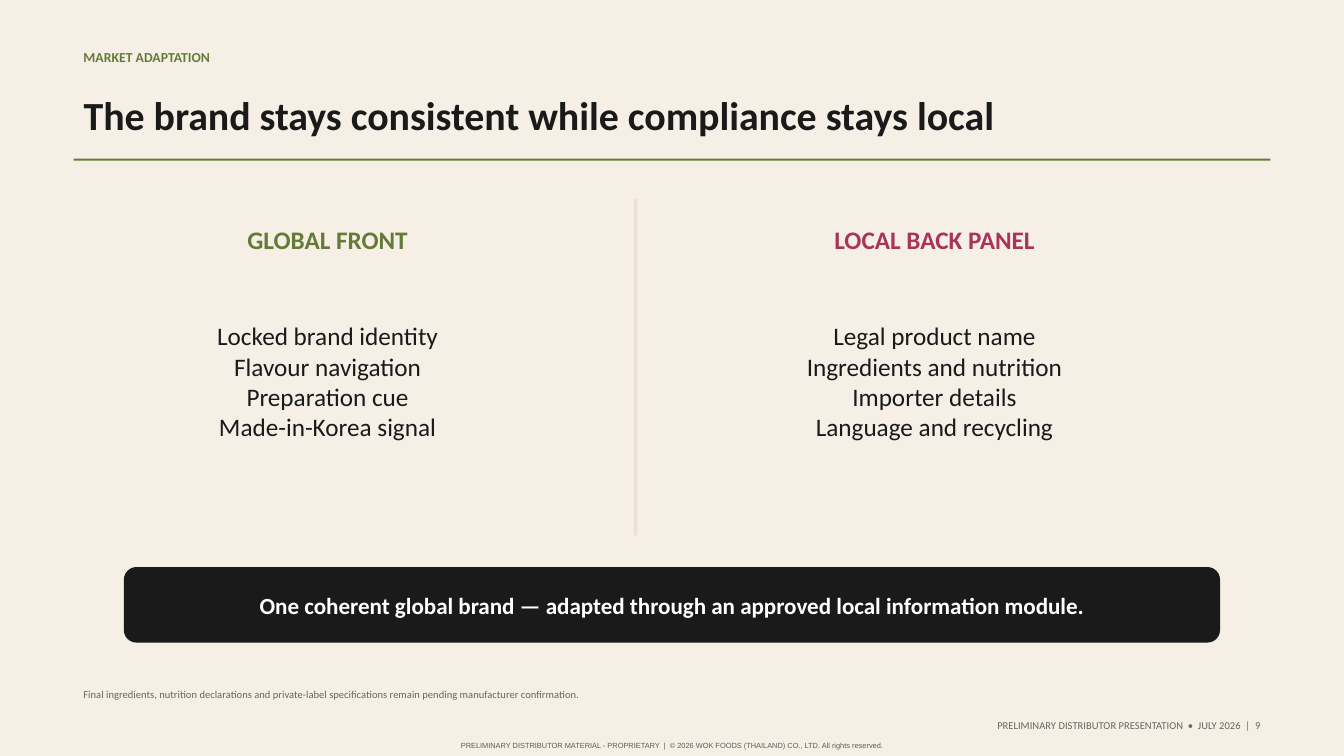
from lxml import etree
from pptx import Presentation
from pptx.dml.color import RGBColor
from pptx.enum.shapes import MSO_SHAPE
from pptx.enum.text import MSO_ANCHOR, MSO_AUTO_SIZE, PP_ALIGN
from pptx.oxml.ns import qn
from pptx.util import Inches, Pt

LEFT, MID, RIGHT = PP_ALIGN.LEFT, PP_ALIGN.CENTER, PP_ALIGN.RIGHT
MIDDLE = MSO_ANCHOR.MIDDLE
FIXED, GROW = MSO_AUTO_SIZE.NONE, MSO_AUTO_SIZE.SHAPE_TO_FIT_TEXT
RECT, ROUND = MSO_SHAPE.RECTANGLE, MSO_SHAPE.ROUNDED_RECTANGLE

CREAM = RGBColor(0xF5, 0xEF, 0xE6)
SAND = RGBColor(0xE9, 0xE0, 0xD6)
GREEN = RGBColor(0x66, 0x7A, 0x38)
BERRY = RGBColor(0xA8, 0x35, 0x59)
INK = RGBColor(0x1A, 0x1A, 0x1A)
GREY = RGBColor(0x6A, 0x64, 0x5E)
STONE = RGBColor(0x5F, 0x5B, 0x56)
WHITE = RGBColor(0xFF, 0xFF, 0xFF)

COLS, ROWS = 64, 36
MARGIN = 3.5
COMPARE = 4  # layout with a title, two headings and two lists


class Deck:
    """Style and current slide; boxes are (left, top, width, height) in grid cells."""

    font = "Calibri"

    def __init__(self):
        self.prs = Presentation()
        self.prs.slide_width, self.prs.slide_height = Inches(13.33), Inches(7.5)
        self.slide = self.prs.slides.add_slide(self.prs.slide_layouts[COMPARE])
        fill = self.slide.background.fill
        fill.solid()
        fill.fore_color.rgb = CREAM

    def cells(self, box):
        wide = self.prs.slide_width / COLS
        high = self.prs.slide_height / ROWS
        return [int(n * unit) for n, unit in zip(box, (wide, high) * 2)]

    def letter(self, frame, lines, size, color, bold=False, align=LEFT, font=None):
        """Set the lines into a text frame, one paragraph each."""
        frame.word_wrap = True
        frame.auto_size = FIXED
        frame.vertical_anchor = MIDDLE
        for i, line in enumerate(lines):
            para = frame.add_paragraph() if i else frame.paragraphs[0]
            para.alignment = align
            para.space_before = Pt(0)
            run = para.add_run()
            run.text = line
            run.font.name = font or self.font
            run.font.size = Pt(size)
            run.font.bold = bold
            run.font.color.rgb = color

    def text(self, box, line, size, color, **style):
        frame = self.slide.shapes.add_textbox(*self.cells(box)).text_frame
        self.letter(frame, [line], size, color, **style)
        return frame

    def hold(self, idx, box, lines, size, color, **style):
        """Fill a template placeholder and drop its bullets and indents."""
        item = self.slide.placeholders[idx]
        item.left, item.top, item.width, item.height = self.cells(box)
        self.letter(item.text_frame, lines, size, color, **style)
        for para in item.text_frame.paragraphs:
            props = para._p.get_or_add_pPr()
            props.set("marL", "0")
            props.set("indent", "0")
            etree.SubElement(props, qn("a:buNone"))

    def block(self, box, color, kind=RECT):
        shape = self.slide.shapes.add_shape(kind, *self.cells(box))
        shape.shadow.inherit = False
        shape.fill.solid()
        shape.fill.fore_color.rgb = color
        shape.line.fill.background()
        return shape

    def panel(self, idx, left, head, color, lines):
        """One side of the comparison: a heading over a centred list."""
        self.hold(idx, (left, 10.4, 21, 2), [head], 18, color, bold=True, align=MID)
        self.hold(idx + 1, (left, 13.4, 21, 9.5), lines, 18, INK, align=MID)

    def banner(self, box, line):
        shape = self.block(box, INK, ROUND)
        shape.adjustments[0] = 0.167
        self.letter(shape.text_frame, [line], 16.5, WHITE, bold=True, align=MID)

    def legal(self, box, line):
        frame = self.text(box, line, 5.3, STONE, align=MID, font="Arial")
        frame.margin_left = frame.margin_right = 0
        frame.margin_top = frame.margin_bottom = 0
        frame.word_wrap = False
        frame.auto_size = GROW


def main():
    deck = Deck()
    deck.text((MARGIN, 2.1, 22, 1.2), "MARKET ADAPTATION", 9.8, GREEN, bold=True)
    deck.hold(0, (MARGIN, 3.8, 56, 3.3),
              ["The brand stays consistent while compliance stays local"],
              28.5, INK, bold=True)
    deck.block((MARGIN, 7.55, 57, 0.1), GREEN)

    deck.panel(1, 5.1, "GLOBAL FRONT", GREEN,
               ["Locked brand identity", "Flavour navigation",
                "Preparation cue", "Made-in-Korea signal"])
    deck.block((30.2, 9.5, 0.15, 16), SAND)
    deck.panel(3, 34, "LOCAL BACK PANEL", BERRY,
               ["Legal product name", "Ingredients and nutrition",
                "Importer details", "Language and recycling"])

    deck.banner((5.9, 27, 52.2, 3.6),
                "One coherent global brand — adapted through an approved "
                "local information module.")
    deck.text((MARGIN, 32.6, 42.5, 0.9),
              "Final ingredients, nutrition declarations and private-label "
              "specifications remain pending manufacturer confirmation.", 7.5, GREY)
    deck.text((38.5, 34.1, 22, 0.9),
              "PRELIMINARY DISTRIBUTOR PRESENTATION  •  JULY 2026  |  9",
              7.5, GREY, align=RIGHT)
    deck.legal((10.1, 35.25, 43.8, 0.5),
               "PRELIMINARY DISTRIBUTOR MATERIAL - PROPRIETARY  |  "
               "© 2026 WOK FOODS (THAILAND) CO., LTD. All rights reserved.")
    deck.prs.save("out.pptx")


if __name__ == "__main__":
    main()
